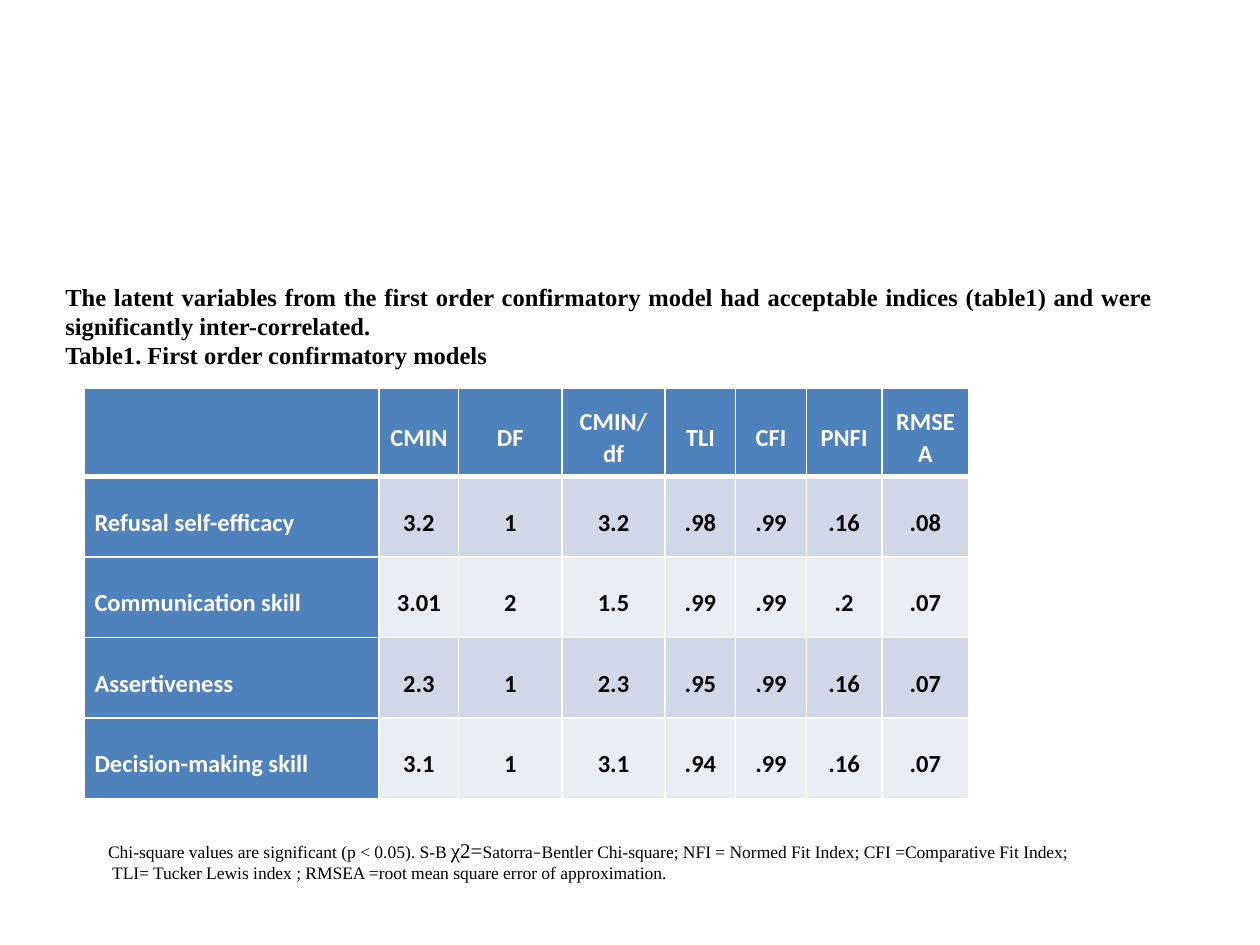
from typing import NamedTuple

from lxml.etree import SubElement
from pptx import Presentation
from pptx.dml.color import RGBColor
from pptx.enum.text import MSO_ANCHOR, MSO_AUTO_SIZE, PP_ALIGN
from pptx.oxml.ns import qn
from pptx.util import Inches, Pt

BLUE = RGBColor(0x4F, 0x81, 0xBD)
DARK = RGBColor(0xD0, 0xD8, 0xE8)
LIGHT = RGBColor(0xE9, 0xED, 0xF4)
WHITE = RGBColor(0xFF, 0xFF, 0xFF)
BLACK = RGBColor(0, 0, 0)
SANS = "Calibri"
SERIF = "Times New Roman"

WIDTHS = [2.34, 0.63, 0.82, 0.82, 0.56, 0.56, 0.6, 0.69]
HEIGHTS = [0.7] + [0.64] * 4
ROWS = [
    ["", "CMIN", "DF", "CMIN/df", "TLI", "CFI", "PNFI", "RMSEA"],
    ["Refusal self-efficacy", "3.2", "1", "3.2", ".98", ".99", ".16", ".08"],
    ["Communication skill", "3.01", "2", "1.5", ".99", ".99", ".2", ".07"],
    ["Assertiveness", "2.3", "1", "2.3", ".95", ".99", ".16", ".07"],
    ["Decision-making skill", "3.1", "1", "3.1", ".94", ".99", ".16", ".07"],
]


class Span(NamedTuple):
    text: str
    size: int = 10
    face: str = SERIF
    bold: bool = False


INTRO = [
    [Span("The latent variables from the first order confirmatory model had "
          "acceptable indices (table1) and were significantly inter-correlated.",
          14, bold=True)],
    [Span("Table1. First order confirmatory models", 14, bold=True)],
]
NOTE = [
    [Span("Chi-square values are significant (p < 0.05). S-B "),
     Span("χ2=", 12),
     Span("Satorra"),
     Span("–", face=SANS),
     Span("Bentler Chi-square; NFI = Normed Fit Index; "
          "CFI =Comparative Fit Index;")],
    [Span(" TLI= Tucker Lewis index ; "
          "RMSEA =root mean square error of approximation.")],
]


def style(font, size: int, face: str, bold: bool, color: RGBColor) -> None:
    font.size = Pt(size)
    font.name = face
    font.bold = bold
    font.color.rgb = color


def add_text(slide, left: float, top: float, width: float, height: float,
             lines: list[list[Span]], align: PP_ALIGN, anchor: MSO_ANCHOR,
             wrap: bool) -> None:
    box = slide.shapes.add_textbox(
        Inches(left), Inches(top), Inches(width), Inches(height))
    frame = box.text_frame
    frame.word_wrap = wrap
    frame.auto_size = MSO_AUTO_SIZE.SHAPE_TO_FIT_TEXT
    frame.vertical_anchor = anchor
    for i, line in enumerate(lines):
        para = frame.add_paragraph() if i else frame.paragraphs[0]
        para.alignment = align
        for span in line:
            run = para.add_run()
            run.text = span.text
            style(run.font, span.size, span.face, span.bold, BLACK)


def set_edges(cell, head: bool) -> None:
    """Give the cell white borders, thicker below the header row."""
    props = cell._tc.get_or_add_tcPr()
    for i, side in enumerate(("lnL", "lnR", "lnT", "lnB")):
        width = Pt(3 if head and side == "lnB" else 1)
        edge = props.makeelement(qn(f"a:{side}"), {"w": str(width)})
        fill = SubElement(edge, qn("a:solidFill"))
        SubElement(fill, qn("a:srgbClr"), val=str(WHITE))
        props.insert(i, edge)


def fill_cell(cell, text: str, row: int, col: int) -> None:
    label = row == 0 or col == 0
    cell.fill.solid()
    cell.fill.fore_color.rgb = BLUE if label else DARK if row % 2 else LIGHT
    set_edges(cell, row == 0)
    if not text:
        return
    cell.vertical_anchor = MSO_ANCHOR.MIDDLE
    cell.margin_left = cell.margin_right = cell.margin_top = Inches(0.08)
    cell.margin_bottom = 0
    cell.text_frame.text = text
    para = cell.text_frame.paragraphs[0]
    para.alignment = PP_ALIGN.CENTER if col else PP_ALIGN.JUSTIFY
    para.line_spacing = 1.07
    para.space_after = Pt(8)
    style(para.runs[0].font, 14, SANS, True, WHITE if label else BLACK)


def add_grid(slide) -> None:
    table = slide.shapes.add_table(
        len(ROWS), len(WIDTHS), Inches(0.67), Inches(3.08),
        Inches(sum(WIDTHS)), Inches(sum(HEIGHTS))).table
    table.first_col = True
    for col, width in zip(table.columns, WIDTHS):
        col.width = Inches(width)
    for r, (height, texts) in enumerate(zip(HEIGHTS, ROWS)):
        table.rows[r].height = Inches(height)
        for c, text in enumerate(texts):
            fill_cell(table.cell(r, c), text, r, c)


def main() -> None:
    deck = Presentation()
    deck.slide_width, deck.slide_height = Inches(10), Inches(7.5)
    slide = deck.slides.add_slide(deck.slide_layouts[6])
    add_grid(slide)
    add_text(slide, 0.42, 2.18, 8.83, 0.81, INTRO,
             PP_ALIGN.JUSTIFY, MSO_ANCHOR.MIDDLE, True)
    add_text(slide, 0.76, 6.61, 7.93, 0.45, NOTE,
             PP_ALIGN.LEFT, MSO_ANCHOR.BOTTOM, False)
    deck.save("out.pptx")


if __name__ == "__main__":
    main()
